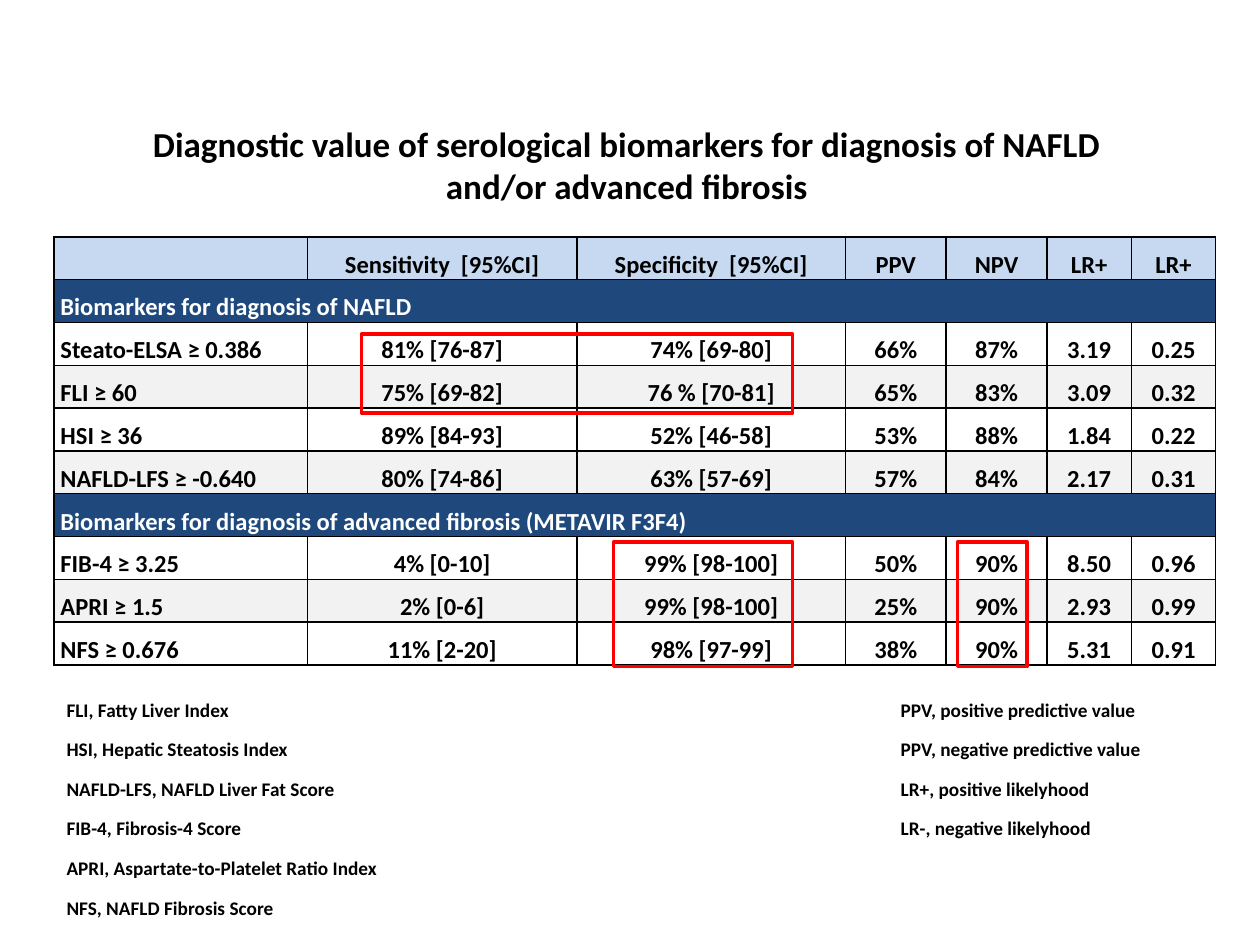
from dataclasses import dataclass

from lxml.etree import SubElement
from pptx import Presentation
from pptx.dml.color import RGBColor
from pptx.enum.shapes import MSO_SHAPE
from pptx.enum.text import MSO_ANCHOR, PP_ALIGN
from pptx.oxml.ns import qn
from pptx.slide import Slide
from pptx.table import _Cell
from pptx.util import Inches, Pt

COLORS = {
    "ink": "000000",
    "paper": "FFFFFF",
    "head": "C6D9F1",
    "band": "1F497D",
    "stripe": "F2F2F2",
    "mark": "FF0000",
}
FONT = "Calibri"
LEFT, TOP = 0.43, 1.88
WIDTHS = [2.01, 2.14, 2.13, 0.8, 0.8, 0.67, 0.67]
ROW = 0.34

ROWS = [
    ["", "Sensitivity  [95%CI]", "Specificity  [95%CI]", "PPV", "NPV", "LR+", "LR+"],
    ["Biomarkers for diagnosis of NAFLD"],
    ["Steato-ELSA ≥ 0.386", "81% [76-87]", "74% [69-80]", "66%", "87%", "3.19", "0.25"],
    ["FLI ≥ 60", "75% [69-82]", "76 % [70-81]", "65%", "83%", "3.09", "0.32"],
    ["HSI ≥ 36", "89% [84-93]", "52% [46-58]", "53%", "88%", "1.84", "0.22"],
    ["NAFLD-LFS ≥ -0.640", "80% [74-86]", "63% [57-69]", "57%", "84%", "2.17", "0.31"],
    ["Biomarkers for diagnosis of advanced fibrosis (METAVIR F3F4)"],
    ["FIB-4 ≥ 3.25", "4% [0-10]", "99% [98-100]", "50%", "90%", "8.50", "0.96"],
    ["APRI ≥ 1.5", "2% [0-6]", "99% [98-100]", "25%", "90%", "2.93", "0.99"],
    ["NFS ≥ 0.676", "11% [2-20]", "98% [97-99]", "38%", "90%", "5.31", "0.91"],
]


@dataclass
class Box:
    left: float
    top: float
    width: float
    height: float

    def place(self) -> list[int]:
        return [Inches(v) for v in (self.left, self.top, self.width, self.height)]


@dataclass
class Note:
    box: Box
    lines: list[str]
    size: int = 11
    align: PP_ALIGN = PP_ALIGN.LEFT


NOTES = [
    Note(
        Box(0.91, 0.92, 8.13, 0.39),
        ["Diagnostic value of serological biomarkers for diagnosis of NAFLD and/or advanced fibrosis"],
        20,
        PP_ALIGN.CENTER,
    ),
    Note(
        Box(LEFT, 5.49, 3.54, 1.88),
        [
            "FLI, Fatty Liver Index",
            "HSI, Hepatic Steatosis Index",
            "NAFLD-LFS, NAFLD Liver Fat Score",
            "FIB-4, Fibrosis-4 Score",
            "APRI, Aspartate-to-Platelet Ratio Index",
            "NFS, NAFLD Fibrosis Score",
        ],
    ),
    Note(
        Box(7.05, 5.49, 2.45, 1.25),
        [
            "PPV, positive predictive value",
            "PPV, negative predictive value",
            "LR+, positive likelyhood",
            "LR-, negative likelyhood",
        ],
    ),
]
MARKS = [
    Box(2.87, 2.65, 3.42, 0.63),
    Box(4.87, 4.3, 1.42, 0.99),
    Box(7.6, 4.3, 0.55, 0.99),
]


def rgb(name: str) -> RGBColor:
    return RGBColor.from_string(COLORS[name])


def style(para, size: int, color: str, align: PP_ALIGN) -> None:
    para.alignment = align
    font = para.font
    font.name, font.size, font.bold = FONT, Pt(size), True
    font.color.rgb = rgb(color)


def edge(cell: _Cell) -> None:
    """Draw a thin line on all four sides; lines must precede the fill."""
    props = cell._tc.get_or_add_tcPr()
    for side in ("lnL", "lnR", "lnT", "lnB"):
        line = SubElement(props, qn(f"a:{side}"), w=str(Pt(1)))
        fill = SubElement(line, qn("a:solidFill"))
        SubElement(fill, qn("a:srgbClr"), val=COLORS["ink"])


def fill_cell(cell: _Cell, text: str, fill: str, color: str, align: PP_ALIGN) -> None:
    edge(cell)
    if fill == "paper":
        cell.fill.background()
    else:
        cell.fill.solid()
        cell.fill.fore_color.rgb = rgb(fill)
    cell.margin_left = cell.margin_right = Inches(0.05)
    cell.margin_top = cell.margin_bottom = 0
    cell.vertical_anchor = MSO_ANCHOR.BOTTOM
    para = cell.text_frame.paragraphs[0]
    if text:
        para.text = text
    para.line_spacing = 1.15
    style(para, 14, color, align)


def add_grid(slide: Slide) -> None:
    box = Box(LEFT, TOP, sum(WIDTHS), ROW * len(ROWS))
    table = slide.shapes.add_table(len(ROWS), len(WIDTHS), *box.place()).table
    table.first_row = table.horz_banding = False
    for col, width in zip(table.columns, WIDTHS):
        col.width = Inches(width)
    data = 0
    for r, texts in enumerate(ROWS):
        band = len(texts) == 1
        color = "paper" if band else "ink"
        if band:
            fill, data = "band", 0
            table.cell(r, 0).merge(table.cell(r, len(WIDTHS) - 1))
        elif r == 0:
            fill = "head"
        else:
            fill = "stripe" if data % 2 else "paper"
            data += 1
        for c in range(len(WIDTHS)):
            text = texts[c] if c < len(texts) else ""
            align = PP_ALIGN.CENTER if c else PP_ALIGN.LEFT
            fill_cell(table.cell(r, c), text, fill, color, align)


def add_note(slide: Slide, note: Note) -> None:
    frame = slide.shapes.add_textbox(*note.box.place()).text_frame
    frame.word_wrap = True
    for i, line in enumerate(note.lines):
        para = frame.add_paragraph() if i else frame.paragraphs[0]
        para.text = line
        if i:
            para.space_before = Pt(9.4)
        style(para, note.size, "ink", note.align)


def add_mark(slide: Slide, box: Box) -> None:
    shape = slide.shapes.add_shape(MSO_SHAPE.RECTANGLE, *box.place())
    shape.shadow.inherit = False
    shape.fill.background()
    shape.line.color.rgb = rgb("mark")
    shape.line.width = Pt(2)


def main() -> None:
    deck = Presentation()
    deck.slide_width, deck.slide_height = Inches(10), Inches(7.5)
    slide = deck.slides.add_slide(deck.slide_layouts[6])
    add_grid(slide)
    for note in NOTES:
        add_note(slide, note)
    for box in MARKS:
        add_mark(slide, box)
    deck.save("out.pptx")


if __name__ == "__main__":
    main()
